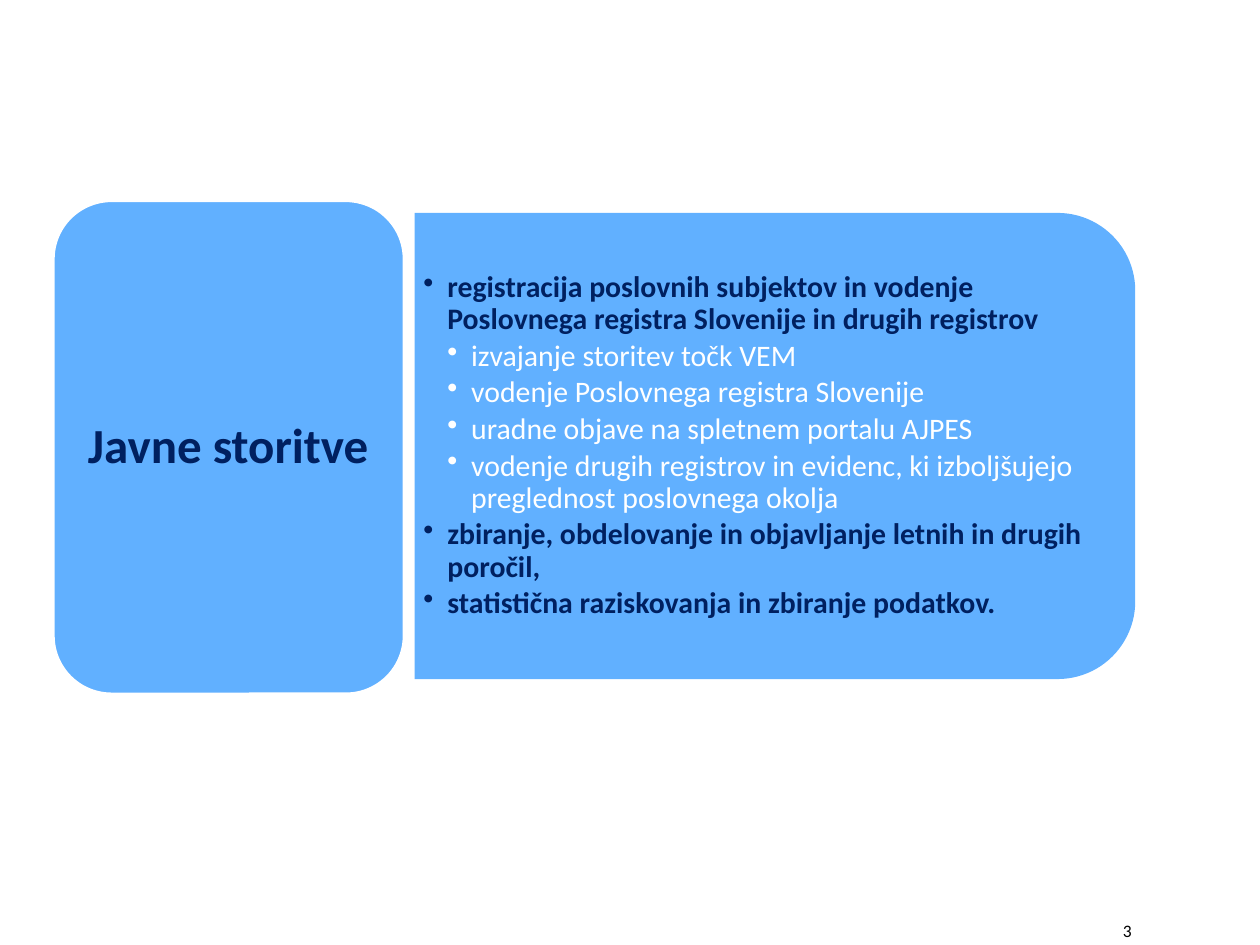
import pptx
import pptx.util
import pptx.dml.color
import pptx.enum.shapes
import pptx.enum.text
import pptx.oxml.ns
import lxml.etree

SLIDE_WIDTH, SLIDE_HEIGHT = 10, 7.5
FONT = "Calibri"
BLUE, NAVY, WHITE, BLACK = "61B0FF", "002060", "FFFFFF", "000000"
INDENT = 0.19

heading = "Javne storitve"
page_number = "3"
services = [
    ("registracija poslovnih subjektov in vodenje Poslovnega registra Slovenije in drugih registrov", [
        "izvajanje storitev točk VEM",
        "vodenje Poslovnega registra Slovenije",
        "uradne objave na spletnem portalu AJPES",
        "vodenje drugih registrov in evidenc, ki izboljšujejo preglednost poslovnega okolja",
    ]),
    ("zbiranje, obdelovanje in objavljanje letnih in drugih poročil,", []),
    ("statistična raziskovanja in zbiranje podatkov.", []),
]

SHAPES = pptx.enum.shapes.MSO_SHAPE
ALIGN = pptx.enum.text.PP_ALIGN
ANCHOR = pptx.enum.text.MSO_ANCHOR


def inches(*lengths):
    return [pptx.util.Inches(length) for length in lengths]


def color(hex_code):
    return pptx.dml.color.RGBColor.from_string(hex_code)


def add_panel(slide, preset, box, rotation=0, outline=None):
    panel = slide.shapes.add_shape(preset, *inches(*box))
    panel.rotation = rotation
    panel.shadow.inherit = False
    panel.fill.solid()
    panel.fill.fore_color.rgb = color(BLUE)
    if outline:
        panel.line.color.rgb = color(outline)
        panel.line.width = pptx.util.Pt(2)
    else:
        panel.line.fill.background()


def add_frame(slide, box, insets=(0.1, 0.05), anchor=ANCHOR.MIDDLE):
    frame = slide.shapes.add_textbox(*inches(*box)).text_frame
    frame.word_wrap = True
    frame.vertical_anchor = anchor
    frame.margin_left = frame.margin_right = pptx.util.Inches(insets[0])
    frame.margin_top = frame.margin_bottom = pptx.util.Inches(insets[1])
    return frame


def write(frame, text, size=17, fill=NAVY, bold=True, align=ALIGN.LEFT,
          line_spacing=0.9, space_after=0, bullet_level=None):
    paragraph = frame.paragraphs[0]
    if paragraph.runs:
        paragraph = frame.add_paragraph()
    paragraph.alignment = align
    paragraph.line_spacing = line_spacing
    paragraph.space_after = pptx.util.Pt(space_after)
    if bullet_level:
        paragraph.level = bullet_level
        properties = paragraph._p.get_or_add_pPr()
        properties.set("marL", str(pptx.util.Inches(INDENT * bullet_level)))
        properties.set("indent", str(pptx.util.Inches(-INDENT)))
        bullet = lxml.etree.SubElement(properties, pptx.oxml.ns.qn("a:buChar"))
        bullet.set("char", "•")
    run = paragraph.add_run()
    run.text = text
    run.font.name = FONT
    run.font.size = pptx.util.Pt(size)
    run.font.bold = bold
    run.font.color.rgb = color(fill)


def main():
    deck = pptx.Presentation()
    deck.slide_width, deck.slide_height = inches(SLIDE_WIDTH, SLIDE_HEIGHT)
    slide = deck.slides.add_slide(deck.slide_layouts[6])

    add_panel(slide, SHAPES.ROUND_2_SAME_RECTANGLE, (4.3, 0.68, 3.7, 5.72), rotation=90)
    service_list = add_frame(slide, (3.29, 1.87, 5.54, 3.34), insets=(0.07, 0.04))
    for service, details in services:
        write(service_list, service, space_after=2.55, bullet_level=1)
        for detail in details:
            write(service_list, detail, fill=WHITE, bold=False, space_after=2.55, bullet_level=2)

    add_panel(slide, SHAPES.ROUNDED_RECTANGLE, (0.42, 1.59, 2.79, 3.92), outline=WHITE)
    heading_frame = add_frame(slide, (0.55, 1.73, 2.52, 3.64), insets=(0.12, 0.06))
    write(heading_frame, heading, size=28, align=ALIGN.CENTER)

    number_frame = add_frame(slide, (7.58, 7.25, 1.5, 0.25), anchor=ANCHOR.TOP)
    write(number_frame, page_number, size=10, fill=BLACK, bold=False,
          align=ALIGN.RIGHT, line_spacing=1.0)

    deck.save("out.pptx")


if __name__ == "__main__":
    main()
